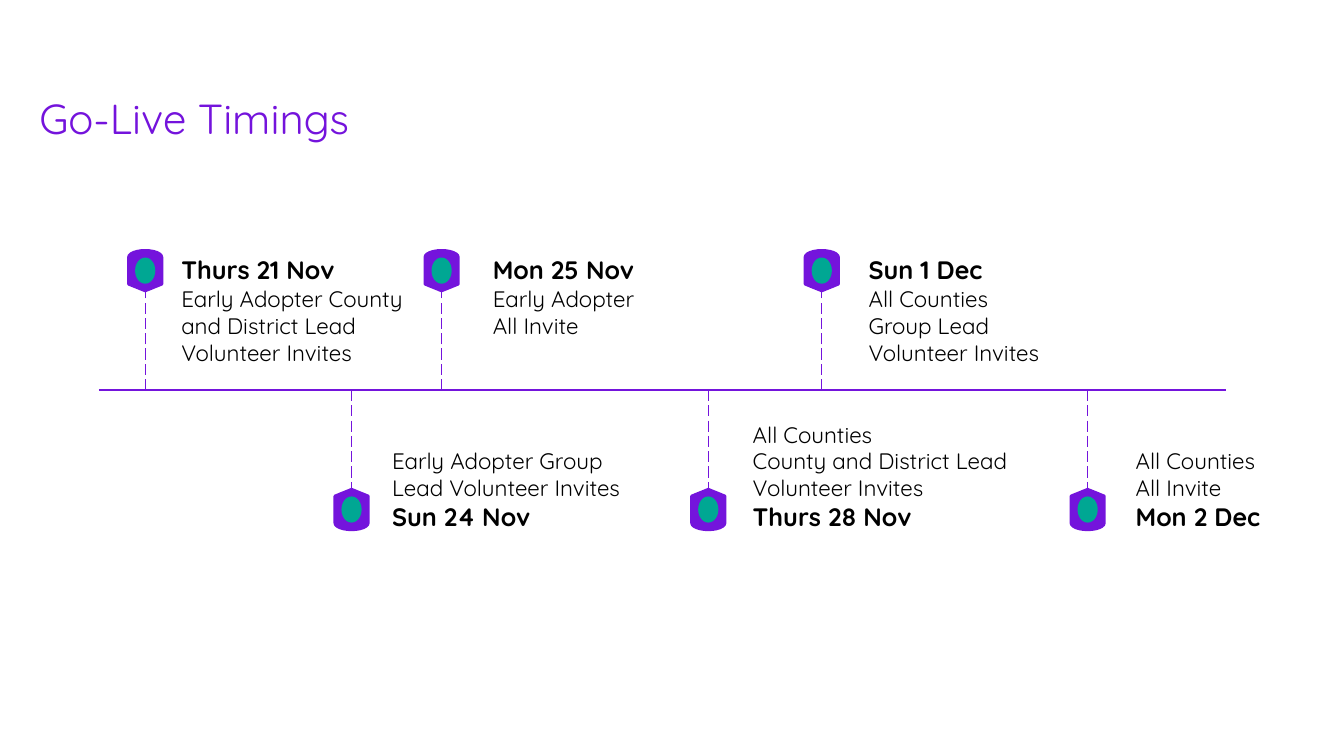
from lxml.etree import SubElement
from pptx import Presentation
from pptx.dml.color import RGBColor
from pptx.enum.dml import MSO_LINE
from pptx.enum.shapes import MSO_CONNECTOR, MSO_SHAPE
from pptx.enum.text import MSO_ANCHOR, MSO_AUTO_SIZE, PP_ALIGN
from pptx.oxml.ns import qn
from pptx.util import Cm, Pt

COLORS = {"title": "7413DC", "purple": "7414DC", "teal": "00A793", "text": "000000"}
FONT = "Quicksand"
AXIS_Y = 9.83
STEM_LENGTH = 2.5
MARKER_OFFSET = 3.01
MARKER_LENGTH, MARKER_WIDTH = 1.02, 0.84
DOT_WIDTH, DOT_HEIGHT = 0.51, 0.66
UPPER_TEXT_TOP, LOWER_TEXT_BOTTOM = 6.32, 13.52

# Date, note, side of the axis, stem x, text left, text width, text height
MILESTONES = [
    ("Thurs 21 Nov", "Early Adopter County and District Lead Volunteer Invites",
     "above", 3.66, 4.37, 6.5, 3.02),
    ("Sun 24 Nov", "Early Adopter Group Lead Volunteer Invites",
     "below", 8.86, 9.68, 6.73, 2.34),
    ("Mon 25 Nov", "Early Adopter\nAll Invite",
     "above", 11.13, 12.22, 4.95, 2.34),
    ("Thurs 28 Nov", "All Counties\nCounty and District Lead Volunteer Invites",
     "below", 17.85, 18.77, 7.29, 3.02),
    ("Sun 1 Dec", "All Counties\nGroup Lead Volunteer Invites",
     "above", 20.71, 21.69, 4.95, 3.02),
    ("Mon 2 Dec", "All Counties\nAll Invite",
     "below", 27.41, 28.42, 4.52, 2.34),
]

deck = Presentation()
deck.slide_width, deck.slide_height = Cm(33.87), Cm(19.05)
page = deck.slides.add_slide(deck.slide_layouts[5])


def add_line(x1, y1, x2, y2):
    line = page.shapes.add_connector(
        MSO_CONNECTOR.STRAIGHT, Cm(x1), Cm(y1), Cm(x2), Cm(y2))
    line.line.color.rgb = RGBColor.from_string(COLORS["purple"])
    line.line.width = Pt(1)
    SubElement(line._element.spPr, qn("a:effectLst"))
    return line


def add_centred_shape(kind, x, y, width, height, color):
    shape = page.shapes.add_shape(
        kind, Cm(x - width / 2), Cm(y - height / 2), Cm(width), Cm(height))
    shape.shadow.inherit = False
    shape.fill.solid()
    shape.fill.fore_color.rgb = RGBColor.from_string(COLORS[color])
    shape.line.fill.background()
    return shape


title = page.shapes.title
title.left, title.top, title.width, title.height = Cm(0.99), Cm(2.34), Cm(13.21), Cm(1.27)
frame = title.text_frame
frame.text = "Go-Live Timings"
frame.margin_left = frame.margin_right = frame.margin_top = frame.margin_bottom = 0
frame.auto_size = MSO_AUTO_SIZE.NONE
frame.vertical_anchor = MSO_ANCHOR.TOP
para = frame.paragraphs[0]
para.alignment = PP_ALIGN.LEFT
span = para.runs[0]
span.font.name, span.font.size = FONT, Pt(30)
span.font.color.rgb = RGBColor.from_string(COLORS["title"])

add_line(2.49, AXIS_Y, 30.89, AXIS_Y)

for date, note, side, stem_x, text_left, text_width, text_height in MILESTONES:
    above = side == "above"
    direction = -1 if above else 1
    stem = add_line(stem_x, AXIS_Y, stem_x, AXIS_Y + direction * STEM_LENGTH)
    stem.line.dash_style = MSO_LINE.LONG_DASH

    marker_y = AXIS_Y + direction * MARKER_OFFSET
    marker = add_centred_shape(MSO_SHAPE.FLOWCHART_DISPLAY, stem_x, marker_y,
                               MARKER_LENGTH, MARKER_WIDTH, "purple")
    marker.rotation = 270 if above else 90
    marker.line.color.rgb = RGBColor.from_string(COLORS["purple"])
    marker.line.width = Pt(2)
    add_centred_shape(MSO_SHAPE.FLOWCHART_CONNECTOR, stem_x, marker_y,
                      DOT_WIDTH, DOT_HEIGHT, "teal")

    text_top = UPPER_TEXT_TOP if above else LOWER_TEXT_BOTTOM - text_height
    box = page.shapes.add_textbox(
        Cm(text_left), Cm(text_top), Cm(text_width), Cm(text_height))
    frame = box.text_frame
    frame.word_wrap = True
    frame.margin_left, frame.margin_right = Cm(0.2), Cm(0.18)
    frame.margin_top = frame.margin_bottom = Cm(0.1)
    para = frame.paragraphs[0]
    para.text = f"{date}\v{note}" if above else f"{note}\v{date}"
    para.text = para.text.replace("\n", "\v")
    for line_break in para._p.findall(qn("a:br")):
        SubElement(line_break, qn("a:rPr"), sz="1600")
    for span in para.runs:
        is_date = span.text == date
        span.font.name = FONT
        span.font.bold = is_date
        span.font.size = Pt(18 if is_date else 16)
        span.font.color.rgb = RGBColor.from_string(COLORS["text"])

deck.save("out.pptx")
